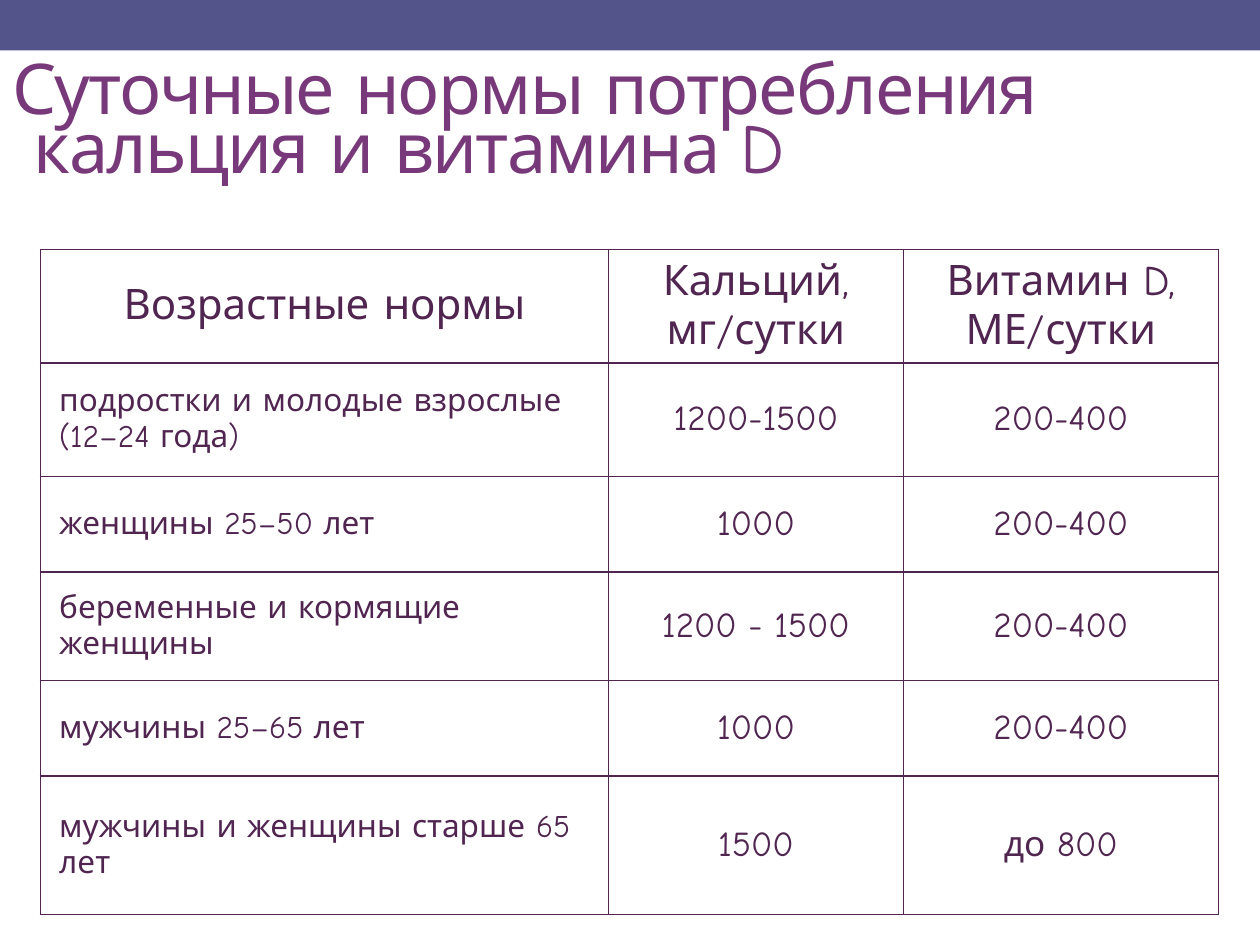
from lxml import etree
from pptx import Presentation
from pptx import util as u
from pptx.dml.color import RGBColor
from pptx.enum import shapes, text
from pptx.oxml import ns

COLORS = {"band": "53548A", "title": "78397A", "ink": "502651"}
FONT = "Comic Neue"
WIDTH, HEIGHT = u.Inches(10), u.Inches(7.5)
COLUMNS = [4.51, 2.34, 2.5]
ROWS = [0.9, 0.9, 0.76, 0.86, 0.76, 1.1]
NORMS = [
    ("Возрастные нормы", "Кальций, мг/сутки", "Витамин D, МЕ/сутки"),
    ("подростки и молодые взрослые (12–24 года)", "1200-1500", "200-400"),
    ("женщины 25–50 лет", "1000", "200-400"),
    ("беременные и кормящие женщины", "1200 - 1500", "200-400"),
    ("мужчины 25–65 лет", "1000", "200-400"),
    ("мужчины и женщины старше 65 лет", "1500", "до 800"),
]


def rgb(name):
    return RGBColor.from_string(COLORS[name])


def style_font(paragraph, size, color):
    paragraph.font.name = FONT
    paragraph.font.size = u.Pt(size)
    paragraph.font.color.rgb = rgb(color)


def add_band(slide):
    shape = slide.shapes.add_shape(
        shapes.MSO_SHAPE.RECTANGLE, 0, 0, WIDTH, u.Inches(0.4))
    shape.shadow.inherit = False
    shape.fill.solid()
    shape.fill.fore_color.rgb = rgb("band")
    shape.line.fill.background()


def add_title(slide, wording):
    shape = slide.shapes.add_textbox(0, u.Inches(0.45), WIDTH, u.Inches(1.11))
    frame = shape.text_frame
    frame.word_wrap = True
    frame.vertical_anchor = text.MSO_ANCHOR.MIDDLE
    paragraph = frame.paragraphs[0]
    paragraph.text = wording
    paragraph.line_spacing = 0.7
    style_font(paragraph, 40, "title")
    paragraph._p.pPr.find(ns.qn("a:defRPr")).set("spc", "-100")


def add_borders(cell):
    properties = cell._tc.get_or_add_tcPr()
    for index, side in enumerate(("lnL", "lnR", "lnT", "lnB")):
        line = etree.Element(ns.qn(f"a:{side}"), w=str(u.Pt(1)))
        fill = etree.SubElement(line, ns.qn("a:solidFill"))
        etree.SubElement(fill, ns.qn("a:srgbClr"), val=COLORS["ink"])
        properties.insert(index, line)


def fill_cell(cell, wording, size, centered):
    cell.fill.background()
    add_borders(cell)
    cell.margin_left = cell.margin_right = u.Inches(0.15)
    cell.margin_top = cell.margin_bottom = u.Inches(0.05)
    cell.vertical_anchor = text.MSO_ANCHOR.MIDDLE
    paragraph = cell.text_frame.paragraphs[0]
    paragraph.text = wording
    paragraph.alignment = text.PP_ALIGN.CENTER if centered else text.PP_ALIGN.LEFT
    paragraph.space_before = u.Pt(0.2 * size)
    style_font(paragraph, size, "ink")


def add_norms_table(slide):
    table = slide.shapes.add_table(
        len(ROWS), len(COLUMNS), u.Inches(0.32), u.Inches(1.98),
        u.Inches(sum(COLUMNS)), u.Inches(sum(ROWS))).table
    table.first_row = table.horz_banding = False
    for column, width in zip(table.columns, COLUMNS):
        column.width = u.Inches(width)
    for row, height in zip(table.rows, ROWS):
        row.height = u.Inches(height)
    for r, norms in enumerate(NORMS):
        for c, wording in enumerate(norms):
            size = 24 if r == 0 else 18 if c == 0 else 20
            fill_cell(table.cell(r, c), wording, size, r == 0 or c > 0)


def main():
    presentation = Presentation()
    presentation.slide_width, presentation.slide_height = WIDTH, HEIGHT
    slide = presentation.slides.add_slide(presentation.slide_layouts[6])
    add_band(slide)
    add_title(slide, "Суточные нормы потребления\v кальция и витамина D")
    add_norms_table(slide)
    presentation.save("out.pptx")


if __name__ == "__main__":
    main()
